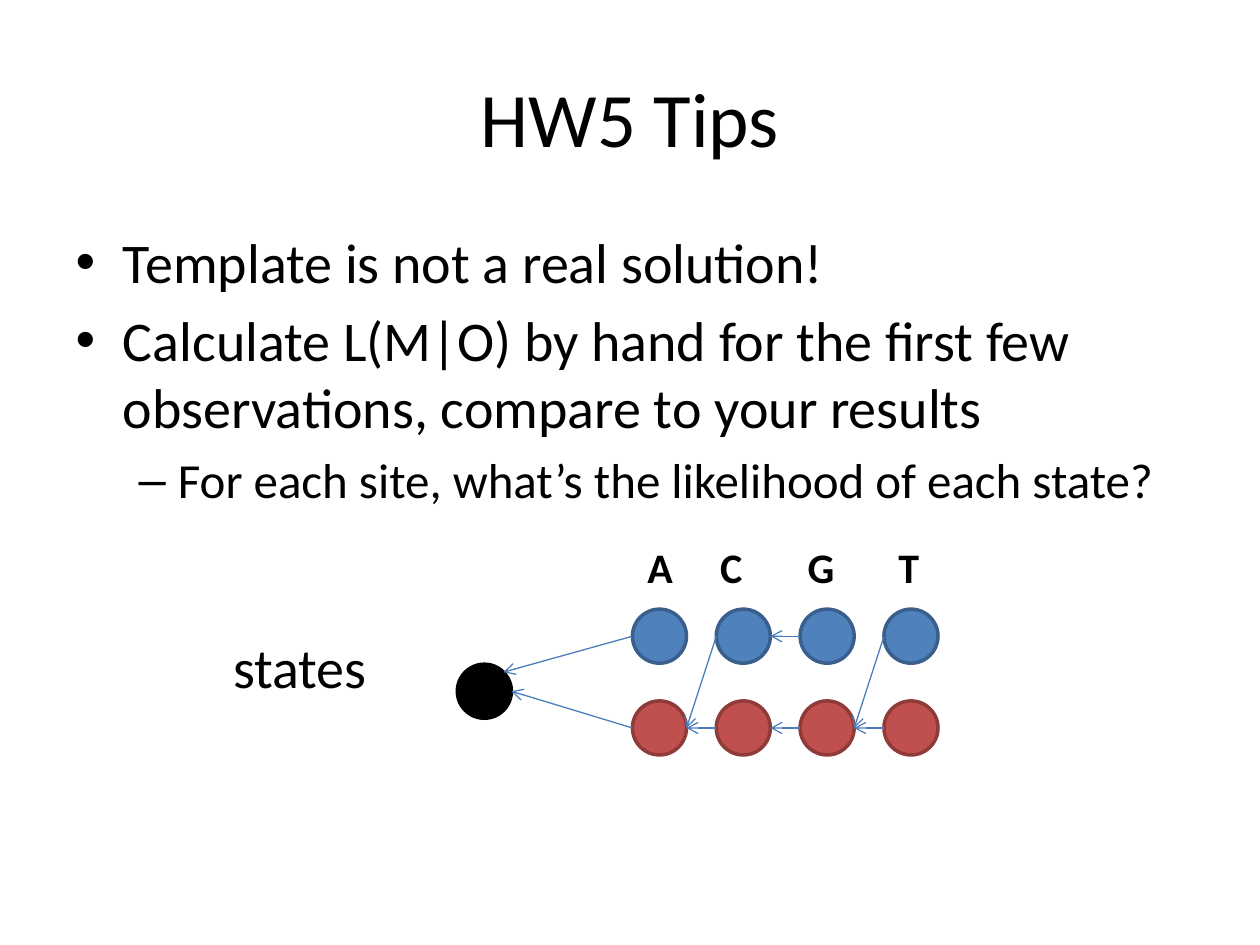
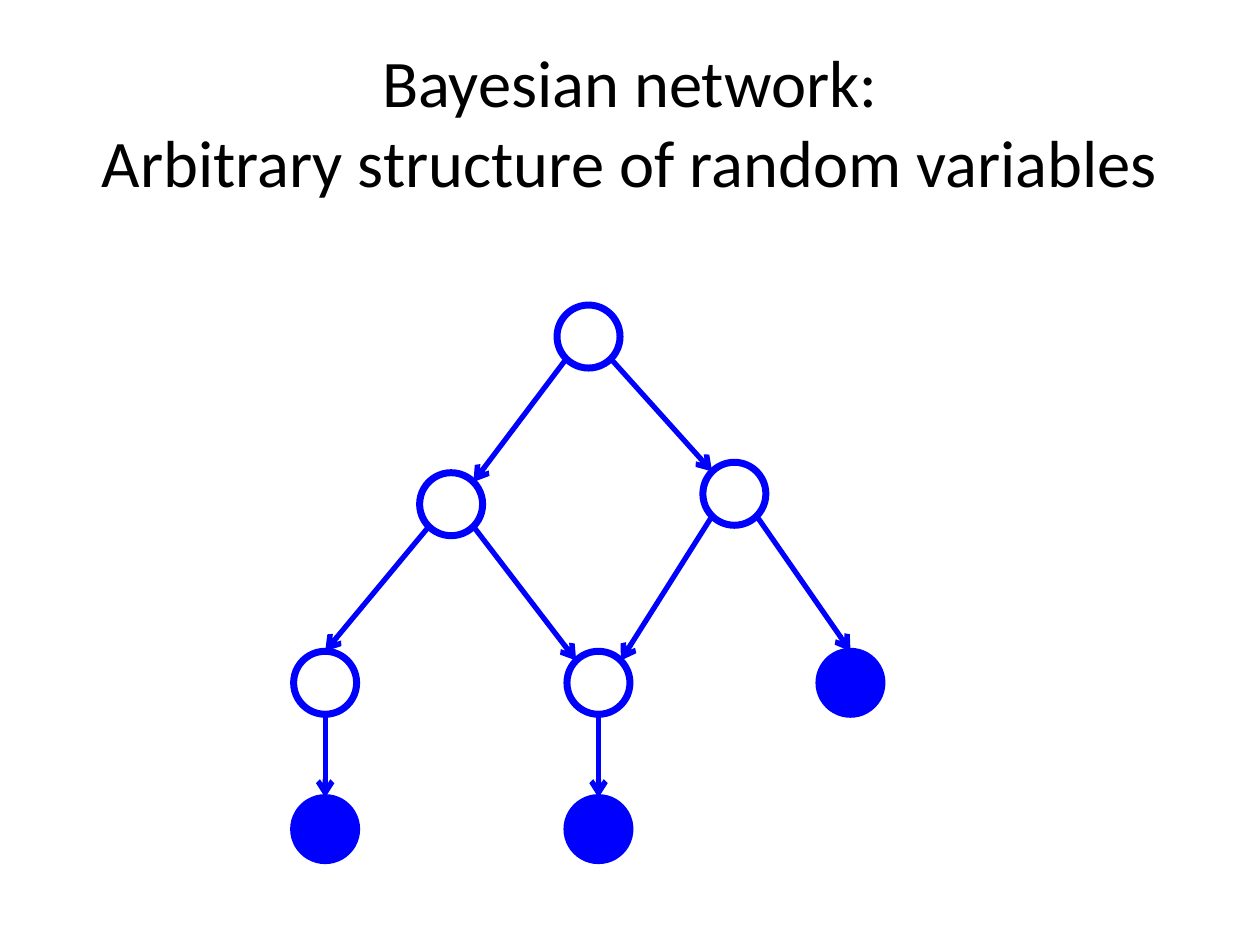
from math import cos, radians, sin

from lxml import etree
from pptx import Presentation
from pptx.dml.color import RGBColor
from pptx.enum.shapes import MSO_CONNECTOR, MSO_SHAPE
from pptx.enum.text import MSO_ANCHOR, MSO_AUTO_SIZE, PP_ALIGN
from pptx.oxml.ns import qn
from pptx.util import Cm, Pt

ELLIPSE = MSO_SHAPE.OVAL
STRAIGHT = MSO_CONNECTOR.STRAIGHT
CENTER = PP_ALIGN.CENTER
MIDDLE = MSO_ANCHOR.MIDDLE
NO_AUTOFIT = MSO_AUTO_SIZE.NONE

TITLE_AND_CONTENT, TITLE_ONLY = 1, 5

# Connection sites of an ellipse, counted anticlockwise from the top
(TOP, TOP_LEFT, LEFT, BOTTOM_LEFT,
 BOTTOM, BOTTOM_RIGHT, RIGHT, TOP_RIGHT) = range(8)

FONT = "Calibri"
COLORS = {
    "text": "000000",
    "start": "000000",
    "upper": "4F81BD",
    "upper line": "3A5F8C",
    "lower": "C0504D",
    "lower line": "8E3B39",
    "path": "4B7EBC",
    "network": "0000FF",
}


def color(name):
    return RGBColor.from_string(COLORS[name])


def site_position(ellipse, site):
    """Return the x and y of a connection site on the ellipse."""
    angle = radians(90 + 45 * site)
    radius = ellipse.width / 2
    return (round(ellipse.left + radius * (1 + cos(angle))),
            round(ellipse.top + radius * (1 - sin(angle))))


class Deck:
    """Holds the shared style and the slide being built."""

    def __init__(self):
        self.presentation = Presentation()
        self.presentation.slide_width = Cm(25.4)
        self.presentation.slide_height = Cm(19.05)
        self.slide = None

    def style(self, paragraph, size, bold=None):
        font = paragraph.font
        font.name, font.size, font.bold = FONT, Pt(size), bold
        font.color.rgb = color("text")

    def place(self, shape, left, top, width, height):
        shape.left, shape.top = Cm(left), Cm(top)
        shape.width, shape.height = Cm(width), Cm(height)

    def new_slide(self, layout, title, size, top):
        layouts = self.presentation.slide_layouts
        self.slide = self.presentation.slides.add_slide(layouts[layout])
        shape = self.slide.shapes.title
        self.place(shape, 1.27, top, 22.86, 3.18)
        frame = shape.text_frame
        frame.text = title
        frame.auto_size = NO_AUTOFIT
        frame.vertical_anchor = MIDDLE
        paragraph = frame.paragraphs[0]
        paragraph.alignment = CENTER
        self.style(paragraph, size)

    def bullets(self, items):
        """Fill the body placeholder with (level, text) items."""
        body = self.slide.placeholders[1]
        self.place(body, 1.27, 4.45, 22.86, 12.57)
        frame = body.text_frame
        frame.text = "\n".join(text for _, text in items)
        frame.auto_size = NO_AUTOFIT
        for paragraph, (level, _) in zip(frame.paragraphs, items):
            paragraph.level = level
            self.style(paragraph, 28 if level else 32)

    def label(self, text, left, top, width, height, size, bold=None, tabs=()):
        """Add a text box; tabs are stops in cm from the text's left edge."""
        box = self.slide.shapes.add_textbox(
            Cm(left), Cm(top), Cm(width), Cm(height))
        frame = box.text_frame
        frame.word_wrap = True
        frame.text = text
        paragraph = frame.paragraphs[0]
        if tabs:
            properties = paragraph._p.get_or_add_pPr()
            tab_list = etree.SubElement(properties, qn("a:tabLst"))
            for position in tabs:
                etree.SubElement(tab_list, qn("a:tab"),
                                 pos=str(Cm(position)), algn="l")
        self.style(paragraph, size, bold)

    def node(self, left, top, diameter, line, line_width, fill=None):
        ellipse = self.slide.shapes.add_shape(
            ELLIPSE, Cm(left), Cm(top), Cm(diameter), Cm(diameter))
        ellipse.shadow.inherit = False
        if fill:
            ellipse.fill.solid()
            ellipse.fill.fore_color.rgb = color(fill)
        else:
            ellipse.fill.background()
        ellipse.line.color.rgb = color(line)
        ellipse.line.width = Pt(line_width)
        return ellipse

    def arrow(self, source, source_site, target, target_site, line, width):
        """Join two ellipses with an arrow glued to their sites."""
        connector = self.slide.shapes.add_connector(
            STRAIGHT, *site_position(source, source_site),
            *site_position(target, target_site))
        connector.line.color.rgb = color(line)
        connector.line.width = Pt(width)
        element = connector._element
        ends = (("a:stCxn", source, source_site),
                ("a:endCxn", target, target_site))
        for tag, ellipse, site in ends:
            etree.SubElement(element.nvCxnSpPr.cNvCxnSpPr, qn(tag),
                             id=str(ellipse.shape_id), idx=str(site))
        properties = element.spPr
        etree.SubElement(properties.find(qn("a:ln")), qn("a:tailEnd"),
                         type="arrow")
        etree.SubElement(properties, qn("a:effectLst"))


def build_tips(deck):
    deck.new_slide(TITLE_AND_CONTENT, "HW5 Tips", size=44, top=0.76)
    deck.bullets([
        (0, "Template is not a real solution!"),
        (0, "Calculate L(M|O) by hand for the first few observations, "
            "compare to your results"),
        (1, "For each site, what’s the likelihood of each state?"),
    ])
    deck.label("states", 4.45, 12.62, 5.87, 1.88, size=32)
    deck.label("A\tC\tG\tT", 12.8, 10.8, 11.43, 1.27, size=24, bold=True,
               tabs=(1.47, 3.23, 5.06))

    diameter = 1.09
    start = deck.node(9.22, 13.39, diameter, "start", 2, "start")
    upper, lower = (
        [deck.node(12.75 + 1.69 * column, top, diameter,
                   f"{row} line", 2, row) for column in range(4)]
        for row, top in (("upper", 12.28), ("lower", 14.13)))

    steps = [
        (upper[0], start, TOP_RIGHT),
        (lower[0], start, RIGHT),
        (upper[1], lower[0], RIGHT),
        (upper[2], upper[1], RIGHT),
        (upper[3], lower[2], RIGHT),
    ]
    steps += [(after, before, RIGHT)
              for before, after in zip(lower, lower[1:])]
    for source, target, site in steps:
        deck.arrow(source, LEFT, target, site, "path", 0.75)


def build_network(deck):
    deck.new_slide(
        TITLE_ONLY,
        "Bayesian network:\vArbitrary structure of random variables",
        size=38, top=0.84)

    hidden = {
        "root": (11.23, 6.15),
        "left": (8.46, 9.53),
        "right": (14.17, 9.32),
        "left leaf": (5.92, 13.13),
        "middle leaf": (11.43, 13.13),
    }
    observed = {
        "right observed": (16.51, 13.13),
        "left observed": (5.92, 16.08),
        "middle observed": (11.43, 16.08),
    }
    nodes = {
        name: deck.node(left, top, 1.27, "network", 4, fill)
        for group, fill in ((hidden, None), (observed, "network"))
        for name, (left, top) in group.items()
    }
    edges = [
        ("root", BOTTOM_LEFT, "left", TOP_RIGHT),
        ("root", BOTTOM_RIGHT, "right", TOP_LEFT),
        ("left", BOTTOM_LEFT, "left leaf", TOP),
        ("left", BOTTOM_RIGHT, "middle leaf", TOP_LEFT),
        ("right", BOTTOM_LEFT, "middle leaf", TOP_RIGHT),
        ("right", BOTTOM_RIGHT, "right observed", TOP),
        ("left leaf", BOTTOM, "left observed", TOP),
        ("middle leaf", BOTTOM, "middle observed", TOP),
    ]
    for source, source_site, target, target_site in edges:
        deck.arrow(nodes[source], source_site, nodes[target], target_site,
                   "network", 3)


def main():
    deck = Deck()
    build_tips(deck)
    build_network(deck)
    deck.presentation.save("out.pptx")


if __name__ == "__main__":
    main()
